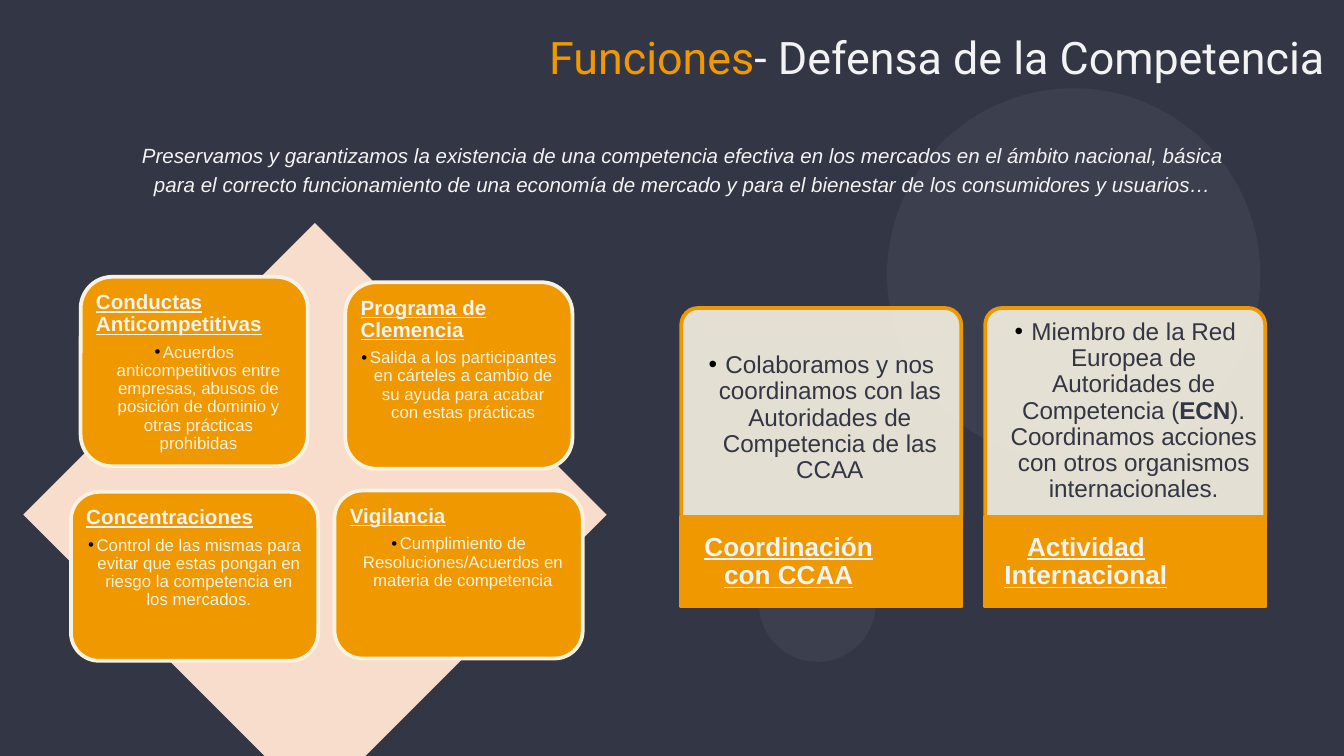
from dataclasses import dataclass
from typing import NamedTuple

from lxml import etree
from pptx import Presentation
from pptx.dml.color import RGBColor
from pptx.enum.shapes import MSO_SHAPE
from pptx.enum.text import MSO_ANCHOR, MSO_AUTO_SIZE, PP_ALIGN
from pptx.oxml.ns import qn
from pptx.util import Pt

LEFT, CENTER = PP_ALIGN.LEFT, PP_ALIGN.CENTER
TOP, MIDDLE = MSO_ANCHOR.TOP, MSO_ANCHOR.MIDDLE
OVAL, DIAMOND, RECT = MSO_SHAPE.OVAL, MSO_SHAPE.DIAMOND, MSO_SHAPE.RECTANGLE
ROUND, TAB = MSO_SHAPE.ROUNDED_RECTANGLE, MSO_SHAPE.ROUND_2_SAME_RECTANGLE

NAVY = RGBColor(0x33, 0x36, 0x44)
SLATE = RGBColor(0x3C, 0x3F, 0x4E)
ORANGE = RGBColor(0xF0, 0x98, 0x00)
PEACH = RGBColor(0xF9, 0xDD, 0xCC)
CREAM = RGBColor(0xF7, 0xF2, 0xE2)
WHITE = RGBColor(0xF3, 0xF3, 0xF3)

HEAD = {"name": "Arial", "size": Pt(11), "bold": True, "underline": True}
NOTE = {"name": "Arial", "size": Pt(9)}
BODY = {"name": "Arial", "size": Pt(13)}
LABEL = HEAD | {"size": Pt(14)}
QUOTE = {"name": "Arial", "size": Pt(11), "italic": True}
TITLE = {"name": "Roboto", "size": Pt(24)}


class Box(NamedTuple):
    x: float
    y: float
    w: float
    h: float

    def shrink(self, by: float) -> "Box":
        return Box(self.x + by, self.y + by, self.w - 2 * by, self.h - 2 * by)


class Run(NamedTuple):
    text: str
    font: dict
    color: RGBColor


@dataclass
class Para:
    runs: list[Run]
    align: PP_ALIGN = CENTER
    lines: float = 0.9
    after: float = 0
    indent: float = 0
    bullet: bool = False


@dataclass
class Duty:
    box: Box
    head: str
    note: str


@dataclass
class Card:
    x: float
    runs: list[Run]
    label: str
    top: float
    indent: float
    dot: Box


DUTIES = [
    Duty(Box(43.2, 148.3, 121.7, 101.5), "Conductas Anticompetitivas",
         "Acuerdos anticompetitivos entre empresas, abusos de posición de "
         "dominio y otras prácticas prohibidas"),
    Duty(Box(185, 151.2, 121.7, 100), "Programa de Clemencia",
         "Salida a los participantes en cárteles a cambio de su ayuda para "
         "acabar con estas prácticas"),
    Duty(Box(38, 263.5, 132.5, 90.5), "Concentraciones",
         "Control de las mismas para evitar que estas pongan en riesgo la "
         "competencia en los mercados."),
    Duty(Box(179.2, 262.8, 133, 90), "Vigilancia",
         "Cumplimiento de Resoluciones/Acuerdos en materia de competencia"),
]
CARDS = [
    Card(365, [Run("Colaboramos y nos coordinamos con las Autoridades de "
                   "Competencia de las CCAA", BODY, NAVY)],
         "Coordinación con CCAA", 21.3, 7.2, Box(499, 299.5, 3.6, 23)),
    Card(527.8, [Run("Miembro de la Red Europea de Autoridades de "
                     "Competencia (", BODY, NAVY),
                 Run("ECN", BODY | {"bold": True}, NAVY),
                 Run("). Coordinamos acciones con otros organismos "
                     "internacionales.", BODY, NAVY)],
         "Actividad Internacional", 3.6, 0, Box(661.7, 301, 3.6, 19.4)),
]


def place(shape, box: Box) -> None:
    for key, val in zip(("left", "top", "width", "height"), box):
        setattr(shape, key, Pt(val))


def fade(fill, share: int) -> None:
    """Set the opacity of a solid fill, in percent."""
    tone = fill._xPr.find(qn("a:solidFill"))[0]
    etree.SubElement(tone, qn("a:alpha")).set("val", str(share * 1000))


def draw(slide, kind: MSO_SHAPE, box: Box, color: RGBColor,
         edge: RGBColor | None = None, share: int = 100):
    shape = slide.shapes.add_shape(kind, *map(Pt, box))
    shape.shadow.inherit = False
    shape.fill.solid()
    shape.fill.fore_color.rgb = color
    if share < 100:
        fade(shape.fill, share)
    if edge is None:
        shape.line.fill.background()
    else:
        shape.line.color.rgb = edge
        shape.line.width = Pt(2)
    return shape


def mark(para) -> None:
    """Add a black bullet."""
    props = para._p.get_or_add_pPr()
    tone = etree.SubElement(props, qn("a:buClr"))
    etree.SubElement(tone, qn("a:srgbClr")).set("val", "000000")
    etree.SubElement(props, qn("a:buFont")).set("typeface", "Arial")
    etree.SubElement(props, qn("a:buChar")).set("char", "•")


def write(frame, paras: list[Para], pads: tuple, anchor=TOP) -> None:
    """Fill a frame; pads are left, top, right and bottom."""
    form = {"word_wrap": True, "auto_size": MSO_AUTO_SIZE.NONE,
            "vertical_anchor": anchor}
    for side, pad in zip(("left", "top", "right", "bottom"), pads):
        form[f"margin_{side}"] = Pt(pad)
    for key, val in form.items():
        setattr(frame, key, val)
    for num, item in enumerate(paras):
        para = frame.add_paragraph() if num else frame.paragraphs[0]
        if item.bullet:
            mark(para)
        form = {"alignment": item.align, "line_spacing": item.lines,
                "space_before": Pt(0), "space_after": Pt(item.after)}
        for key, val in form.items():
            setattr(para, key, val)
        props = para._p.get_or_add_pPr()
        props.set("marL", str(Pt(item.indent)))
        props.set("indent", str(Pt(-item.indent if item.bullet else 0)))
        for part in item.runs:
            run = para.add_run()
            run.text = part.text
            for key, val in part.font.items():
                setattr(run.font, key, val)
            run.font.color.rgb = part.color


def label(slide, box: Box, paras: list[Para], pads: tuple, anchor=TOP) -> None:
    write(slide.shapes.add_textbox(*map(Pt, box)).text_frame,
          paras, pads, anchor)


def add_duty(slide, duty: Duty) -> None:
    draw(slide, ROUND, duty.box, ORANGE, CREAM)
    label(slide, duty.box.shrink(4.6), [
        Para([Run(duty.head, HEAD, WHITE)], LEFT, after=4),
        Para([Run(duty.note, NOTE, CREAM)], indent=4.5, bullet=True),
    ], (3.6,) * 4)


def add_card(slide, card: Card) -> None:
    page = Box(card.x, 165, 150, 112)
    bar = Box(card.x, 277, 150, 48)
    shape = draw(slide, TAB, page, CREAM, ORANGE, 90)
    shape.adjustments[0], shape.adjustments[1] = 0.08, 0
    label(slide, page.shrink(2.6),
          [Para(card.runs, indent=9, bullet=True)], (1.5, card.top, 1.5, 1.5))
    draw(slide, RECT, bar, ORANGE, ORANGE)
    label(slide, bar._replace(w=105),
          [Para([Run(card.label, LABEL, WHITE)], indent=card.indent)],
          (4.5, 0, 1.5, 0), MIDDLE)
    dot = draw(slide, OVAL, card.dot, ORANGE, ORANGE, 90)
    fade(dot.line.fill, 90)


def main() -> None:
    deck = Presentation()
    deck.slide_width, deck.slide_height = Pt(720), Pt(405)
    slide = deck.slides.add_slide(deck.slide_layouts[5])
    slide.background.fill.solid()
    slide.background.fill.fore_color.rgb = NAVY

    title = slide.shapes.title
    place(title, Box(235.5, 8.6, 532.8, 52))
    write(title.text_frame, [Para([
        Run("Funciones", TITLE, ORANGE),
        Run("- Defensa de la Competencia", TITLE, WHITE)], lines=1.0)],
        (7.2,) * 4)

    draw(slide, OVAL, Box(475.2, 47.3, 200, 200), SLATE)
    draw(slide, OVAL, Box(406.6, 292, 62.6, 62.6), SLATE)
    label(slide, Box(52, 67.7, 616, 269), [Para([Run(
        "Preservamos y garantizamos la existencia de una competencia efectiva "
        "en los mercados en el ámbito nacional, básica para el correcto "
        "funcionamiento de una economía de mercado y para el bienestar de los "
        "consumidores y usuarios…", QUOTE, WHITE)], lines=1.15, indent=12)],
        (7.2,) * 4)

    draw(slide, DIAMOND, Box(12.5, 119.5, 312.5, 312.5), PEACH)
    for duty in DUTIES:
        add_duty(slide, duty)
    for card in CARDS:
        add_card(slide, card)
    deck.save("out.pptx")


if __name__ == "__main__":
    main()
